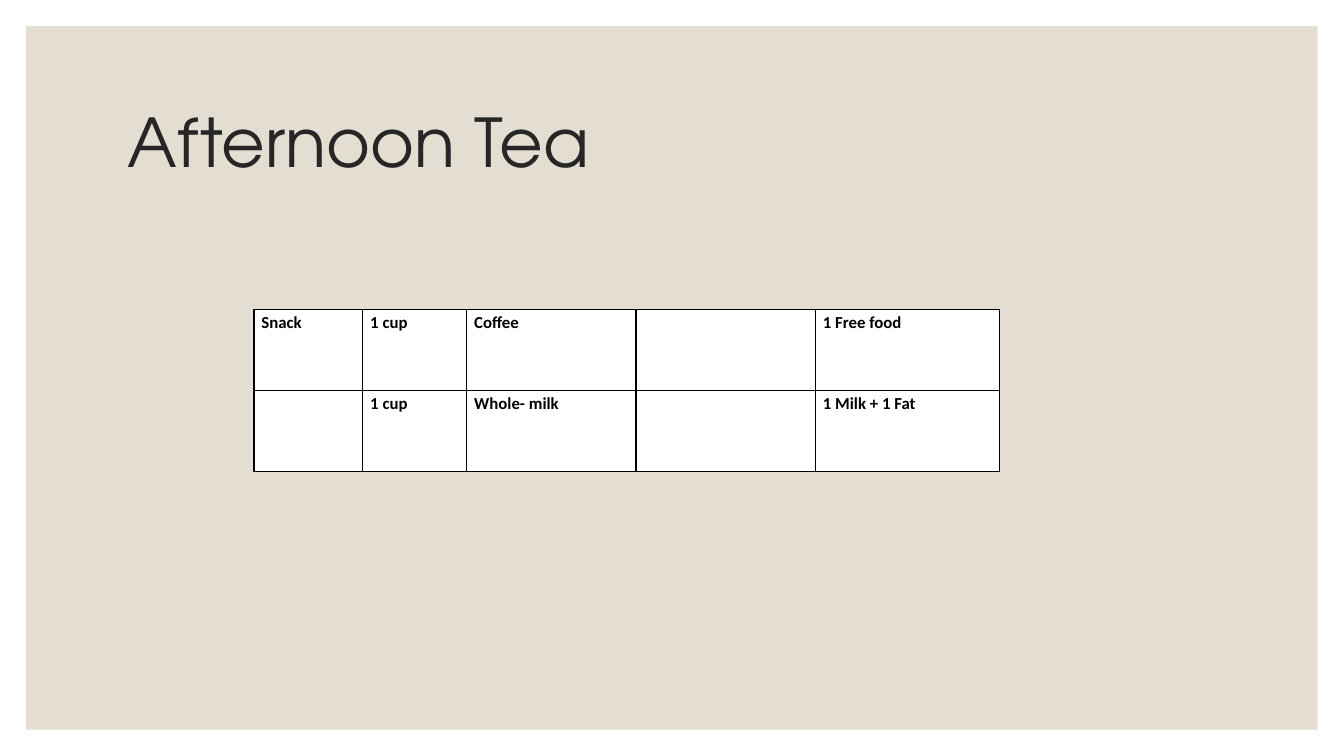
from dataclasses import dataclass

from lxml.etree import SubElement
from pptx import Presentation
from pptx.dml.color import RGBColor as Rgb
from pptx.enum.shapes import MSO_SHAPE as Preset
from pptx.enum.text import MSO_ANCHOR as Anchor
from pptx.oxml.ns import qn
from pptx.slide import Slide
from pptx.table import _Cell as Cell
from pptx.text.text import _Paragraph as Paragraph
from pptx.util import Cm, Pt

COLORS = {"paper": "FFFFFF", "panel": "E3DED1", "title": "262626", "ink": "000000"}
SLIDE_WIDTH, SLIDE_HEIGHT = 33.87, 19.05
MARGIN = 0.66
COLUMN_WIDTHS = (2.74, 2.62, 4.27, 4.52, 4.65)
ROW_HEIGHT = 2.04


@dataclass(frozen=True)
class TextStyle:
    font: str
    size: float
    color: str
    spacing: float
    bold: bool = False


@dataclass(frozen=True)
class Serving:
    meal: str
    amount: str
    food: str
    note: str
    exchange: str

    def texts(self) -> tuple[str, ...]:
        return self.meal, self.amount, self.food, self.note, self.exchange


TITLE_STYLE = TextStyle("TeX Gyre Adventor", 48, "title", 0.9)
CELL_STYLE = TextStyle("Calibri", 12, "ink", 1.15, True)
SERVINGS = (
    Serving("Snack", "1 cup", "Coffee", "", "1 Free food"),
    Serving("", "1 cup", "Whole- milk", "", "1 Milk + 1 Fat"),
)


def color(name: str) -> Rgb:
    return Rgb.from_string(COLORS[name])


def write(para: Paragraph, text: str, style: TextStyle) -> None:
    para.line_spacing = style.spacing
    span = para.add_run()
    span.text = text
    span.font.name = style.font
    span.font.size = Pt(style.size)
    span.font.bold = style.bold
    span.font.color.rgb = color(style.color)


def add_panel(page: Slide) -> None:
    panel = page.shapes.add_shape(
        Preset.RECTANGLE, Cm(MARGIN), Cm(MARGIN),
        Cm(SLIDE_WIDTH - 2 * MARGIN), Cm(SLIDE_HEIGHT - 2 * MARGIN),
    )
    panel.shadow.inherit = False
    panel.fill.solid()
    panel.fill.fore_color.rgb = color("panel")
    panel.line.fill.background()


def add_title(page: Slide, text: str) -> None:
    box = page.shapes.add_textbox(Cm(2.97), Cm(1.78), Cm(27.94), Cm(3.81))
    box.text_frame.word_wrap = True
    box.text_frame.vertical_anchor = Anchor.MIDDLE
    write(box.text_frame.paragraphs[0], text, TITLE_STYLE)


def add_borders(cell: Cell) -> None:
    properties = cell._tc.get_or_add_tcPr()
    for side in ("a:lnL", "a:lnR", "a:lnT", "a:lnB"):
        line = SubElement(properties, qn(side), w=str(Pt(1)))
        fill = SubElement(line, qn("a:solidFill"))
        SubElement(fill, qn("a:srgbClr"), val=COLORS["ink"])


def fill_cell(cell: Cell, text: str) -> None:
    add_borders(cell)
    cell.fill.solid()
    cell.fill.fore_color.rgb = color("paper")
    cell.margin_left = cell.margin_right = Cm(0.19)
    cell.margin_top = cell.margin_bottom = Cm(0)
    if text:
        write(cell.text_frame.paragraphs[0], text, CELL_STYLE)


def add_menu(page: Slide, servings: tuple[Serving, ...]) -> None:
    table = page.shapes.add_table(
        len(servings), len(COLUMN_WIDTHS), Cm(6.4), Cm(7.8),
        Cm(sum(COLUMN_WIDTHS)), Cm(ROW_HEIGHT * len(servings)),
    ).table
    table.first_row = table.horz_banding = False
    for column, width in zip(table.columns, COLUMN_WIDTHS):
        column.width = Cm(width)
    for row, serving in zip(table.rows, servings):
        row.height = Cm(ROW_HEIGHT)
        for cell, text in zip(row.cells, serving.texts()):
            fill_cell(cell, text)


def main() -> None:
    deck = Presentation()
    deck.slide_width, deck.slide_height = Cm(SLIDE_WIDTH), Cm(SLIDE_HEIGHT)
    page = deck.slides.add_slide(deck.slide_layouts[6])
    page.background.fill.solid()
    page.background.fill.fore_color.rgb = color("paper")
    add_panel(page)
    add_title(page, "Afternoon Tea")
    add_menu(page, SERVINGS)
    deck.save("out.pptx")


if __name__ == "__main__":
    main()
